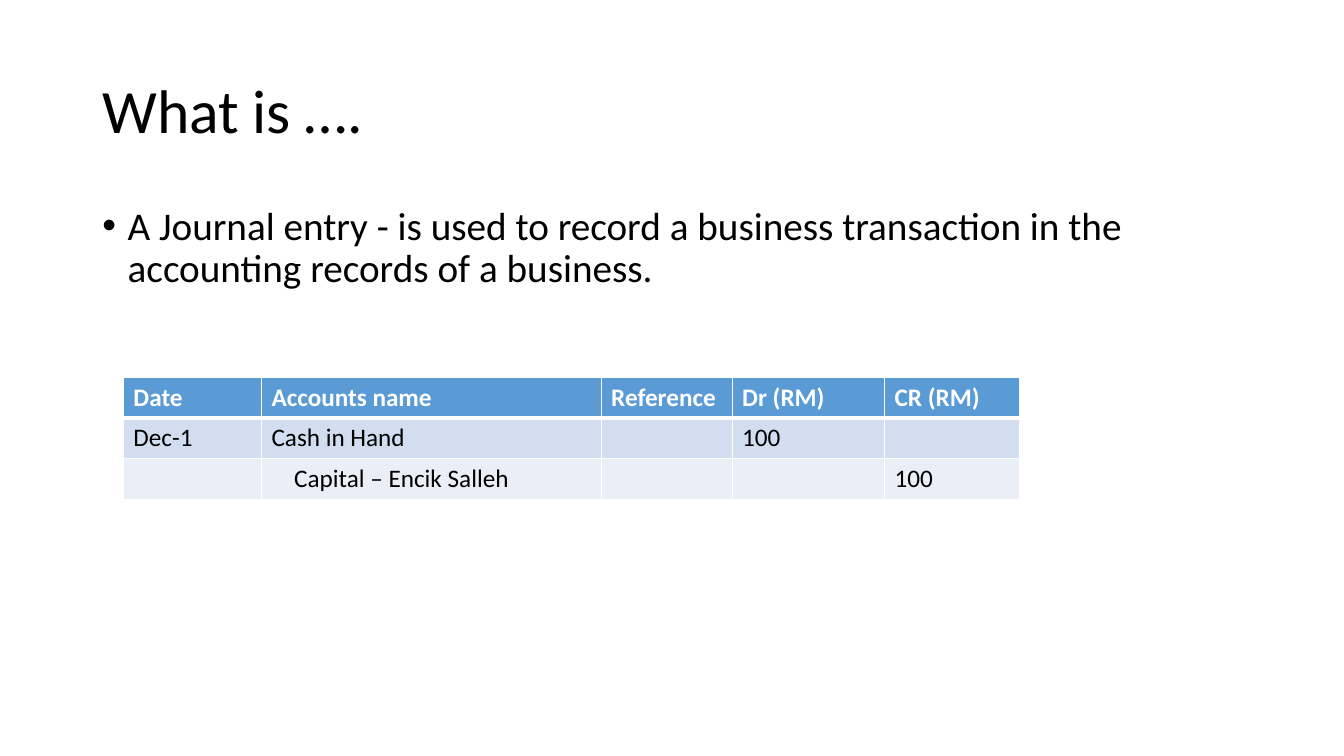
"""Build a slide that explains a journal entry with a sample table."""
from lxml import etree
from pptx import Presentation
from pptx.dml.color import RGBColor
from pptx.enum.text import MSO_ANCHOR
from pptx.oxml.ns import qn
from pptx.util import Cm, Pt

TOP, MIDDLE = MSO_ANCHOR.TOP, MSO_ANCHOR.MIDDLE
FONT = "Calibri"
BLACK, WHITE, BLUE = "000000", "FFFFFF", "5B9BD5"
BANDS = ["D2DEEF", "EAEFF7"]
COLUMN_WIDTHS = [3.48, 8.56, 3.3, 3.84, 3.4]
ROW_HEIGHT = 1.03
ENTRY = [
    ["Date", "Accounts name", "Reference", "Dr (RM)", "CR (RM)"],
    ["Dec-1", "Cash in Hand", "", "100", ""],
    ["", "Capital – Encik Salleh", "", "", "100"],
]


def rgb(value):
    return RGBColor.from_string(value)


def format_runs(p, size, color, bold=False):
    for r in p.runs:
        r.font.name = FONT
        r.font.size = Pt(size)
        r.font.bold = bold
        r.font.color.rgb = rgb(color)


def indent(p, left, first=0):
    pPr = p._p.get_or_add_pPr()
    pPr.set("marL", str(Cm(left)))
    pPr.set("indent", str(Cm(first)))
    return pPr


def add_text(slide, text, top, height, size, anchor):
    sp = slide.shapes.add_textbox(Cm(2.33), Cm(top), Cm(29.21), Cm(height))
    tf = sp.text_frame
    tf.word_wrap = True
    tf.vertical_anchor = anchor
    p = tf.paragraphs[0]
    p.text = text
    p.line_spacing = 0.9
    format_runs(p, size, BLACK)
    return p


def add_bullet(p):
    pPr = indent(p, 0.64, -0.64)
    etree.SubElement(pPr, qn("a:buFont"), typeface="Arial")
    etree.SubElement(pPr, qn("a:buChar"), char="•")


def set_borders(cell, widths):
    tcPr = cell._tc.get_or_add_tcPr()
    for side, width in widths.items():
        ln = etree.SubElement(tcPr, qn(f"a:ln{side}"), w=str(Pt(width)))
        fill = etree.SubElement(ln, qn("a:solidFill"))
        etree.SubElement(fill, qn("a:srgbClr"), val=WHITE)


def add_entry_table(slide, left, top):
    frame = slide.shapes.add_table(
        len(ENTRY), len(COLUMN_WIDTHS), Cm(left), Cm(top),
        Cm(sum(COLUMN_WIDTHS)), Cm(ROW_HEIGHT * len(ENTRY)))
    table = frame.table
    for column, width in zip(table.columns, COLUMN_WIDTHS):
        column.width = Cm(width)
    for i, texts in enumerate(ENTRY):
        table.rows[i].height = Cm(ROW_HEIGHT)
        header = i == 0
        for j, text in enumerate(texts):
            cell = table.cell(i, j)
            set_borders(cell, {"L": 1, "R": 1, "T": 3 if i == 1 else 1,
                               "B": 3 if header else 1})
            cell.fill.solid()
            cell.fill.fore_color.rgb = rgb(BLUE if header else BANDS[i - 1])
            cell.text = text
            format_runs(cell.text_frame.paragraphs[0], 18,
                        WHITE if header else BLACK, header)
    return table


def main():
    prs = Presentation()
    prs.slide_width, prs.slide_height = Cm(33.87), Cm(19.05)
    slide = prs.slides.add_slide(prs.slide_layouts[6])
    add_text(slide, "What is ….", 1.01, 3.68, 44, MIDDLE)
    definition = add_text(
        slide, "A Journal entry - is used to record a business transaction in "
        "the accounting records of a business.", 5.07, 12.09, 28, TOP)
    add_bullet(definition)
    table = add_entry_table(slide, 3.11, 9.5)
    indent(table.cell(2, 1).text_frame.paragraphs[0], 0.57)
    prs.save("out.pptx")


if __name__ == "__main__":
    main()
